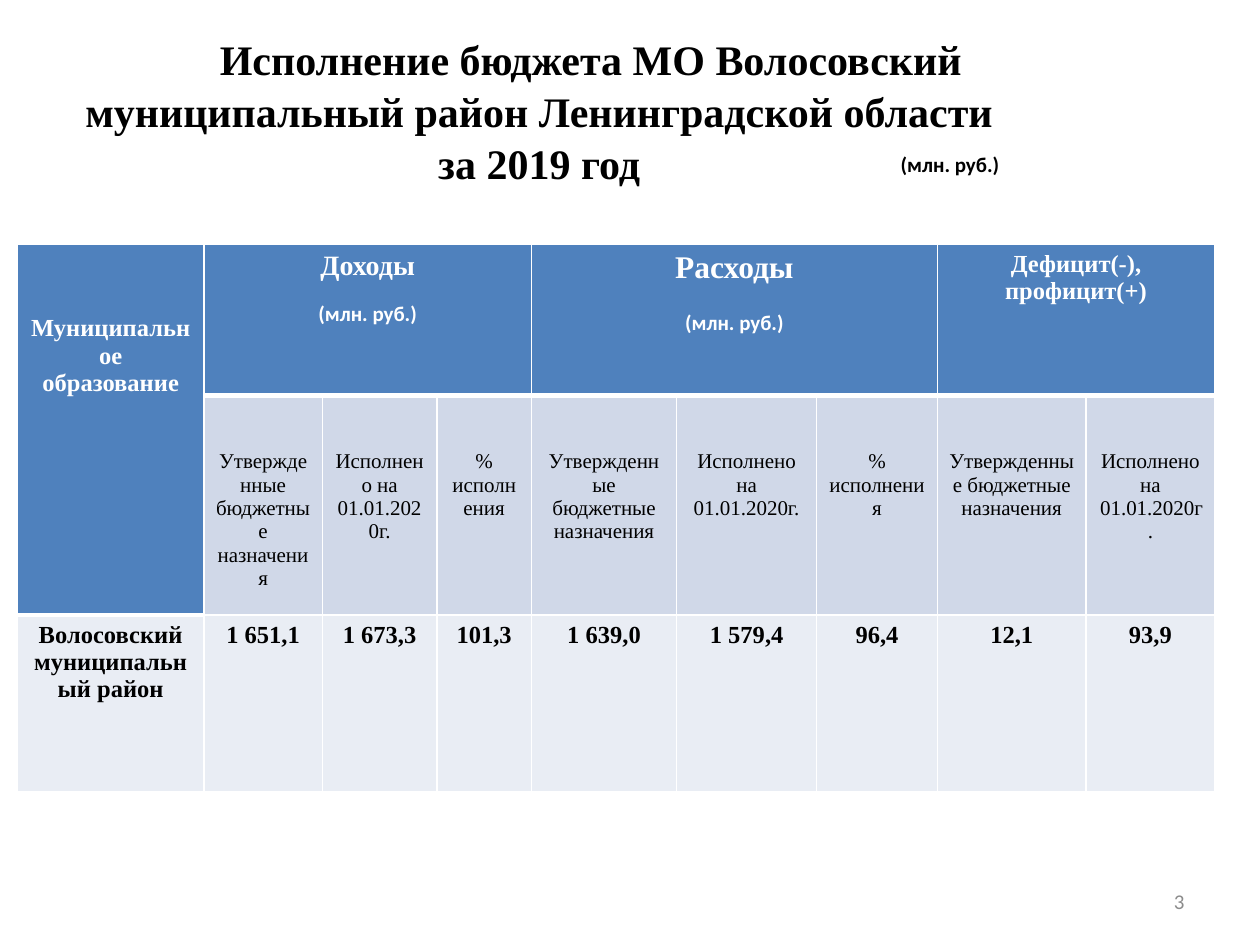
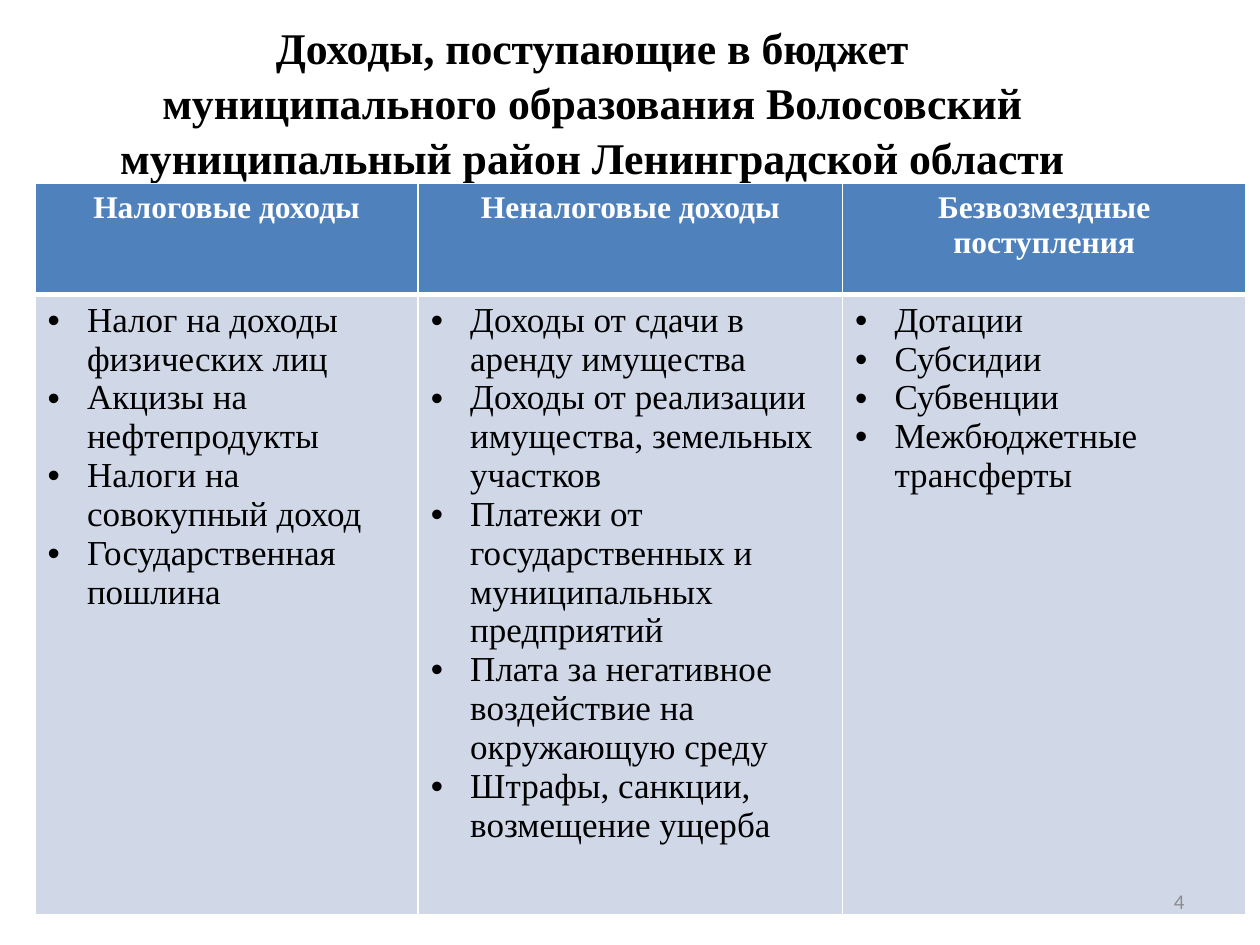
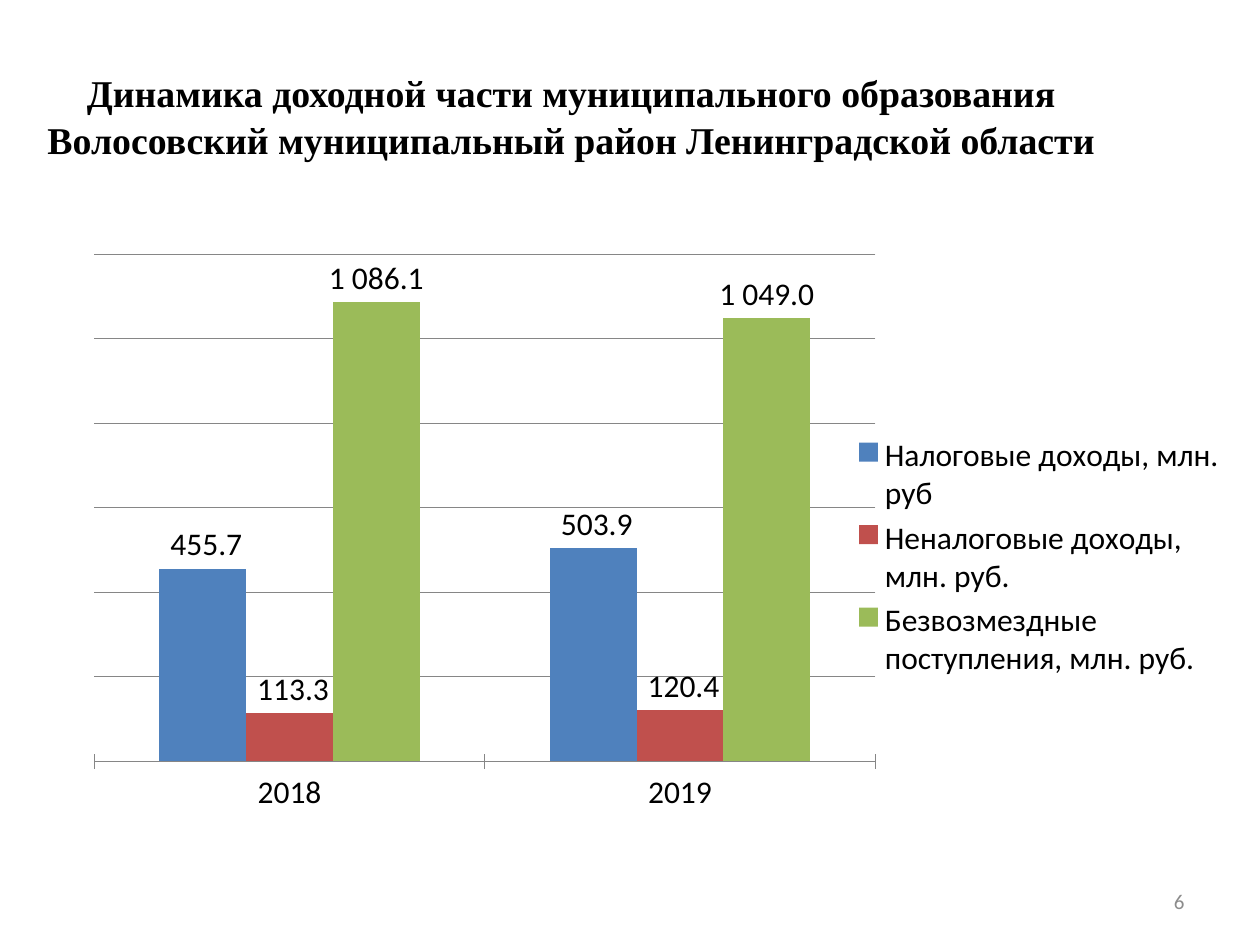
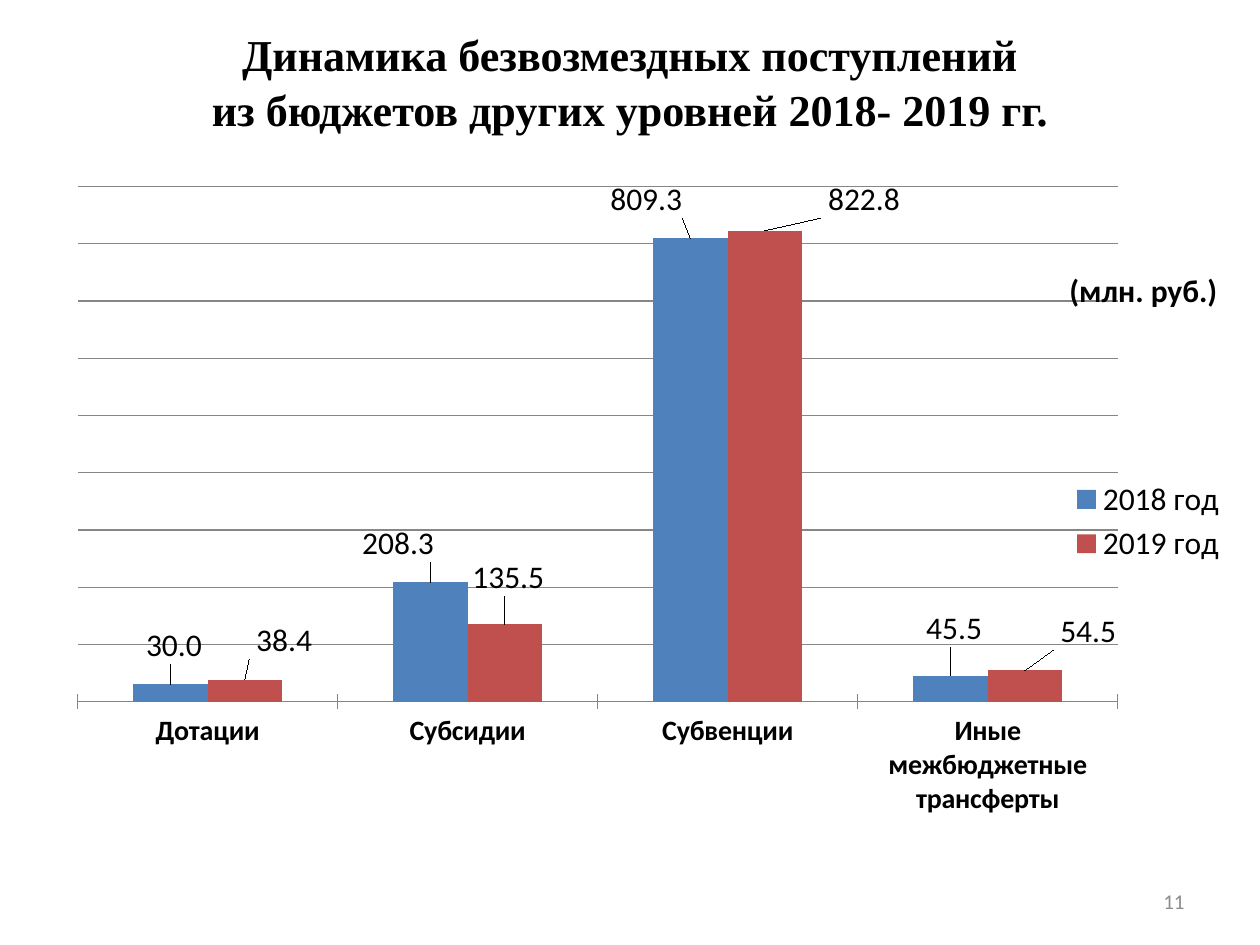
"""Build four slides on the budget of the Volosovsky municipal district."""
import dataclasses

import pptx
import pptx.chart.data
import pptx.dml.color
import pptx.enum.chart
import pptx.enum.text
import pptx.oxml.ns
import pptx.util
from lxml import etree

Pt = pptx.util.Pt
qn = pptx.oxml.ns.qn
ALIGN = pptx.enum.text.PP_ALIGN
MIDDLE = pptx.enum.text.MSO_ANCHOR.MIDDLE


@dataclasses.dataclass(frozen=True)
class Style:
    size: float
    color: str = "000000"
    bold: bool = True
    font: str = "Times New Roman"


class Theme:
    white = "FFFFFF"
    black = "000000"
    header = "4F81BD"
    band = "D0D8E8"
    pale = "E9EDF4"
    grid = "868686"
    series = ("4F81BD", "C0504D", "9BBB59")
    body = "Calibri"
    chart_size = 18
    title_spacing = 1.04
    thin, thick = 1, 3
    number = Style(12, "8C8C8C", False, body)
    unit = Style(12, font=body)
    big_unit = Style(18, font=body)
    head_unit = Style(12, white, font=body)
    subhead = Style(12, bold=False)
    value = Style(14)
    bullet = Style(20, bold=False)
    value_format = "#\\ ##0.0"

    @staticmethod
    def heading(size):
        return Style(size, Theme.white)


UNIT = "(млн. руб.)"
PAGE_NUMBER_BOX = (516.2, 500.4, 167.8, 28.8)

EXECUTION = {
    "page": 3,
    "title": {"lines": ["Исполнение бюджета МО Волосовский муниципальный район Ленинградской области",
                        "за 2019 год"],
              "box": (10.4, 9.4, 595.4, 106.6), "size": 24, "first_indent": 59},
    "unit_box": (507.6, 82.8, 141, 21.6),
    "at": (10, 139.7),
    "columns": (106.5, 67.7, 65.5, 54, 83, 80, 69, 85, 73.5),
    "rows": (86.4, 125.3, 100.8),
    "district": ("Муниципальное образование", 14),
    "groups": [("Доходы", 16, 3, 11.5), ("Расходы", 18, 3, 14), ("Дефицит(-), профицит(+)", 14, 2, None)],
    "subheads": [["Утвержденные", "бюджетные назначения"], ["Исполнено на 01.01.2020г."], ["% исполнения"],
                 ["Утвержденные бюджетные назначения"], ["Исполнено", "на", "01.01.2020г."], ["% исполнения"],
                 ["Утвержденные бюджетные назначения"], ["Исполнено на 01.01.2020г."]],
    "values": [["Волосовский", "муниципальный район"], ["1 651,1"], ["1 673,3"], ["101,3"], ["1 639,0"],
               ["1 579,4"], ["96,4"], ["12,1"], ["93,9"]],
}

SOURCES = {
    "page": 4,
    "title": {"lines": ["Доходы, поступающие в бюджет",
                        "муниципального образования Волосовский муниципальный район Ленинградской области"],
              "box": (14.4, 37.4, 648, 67.7), "size": 25, "lift": 27},
    "at": (20, 105),
    "columns": (219, 242.5, 230.5),
    "rows": (63.4, 354.2),
    "kinds": {
        "Налоговые доходы": ["Налог на доходы физических лиц", "Акцизы на нефтепродукты",
                             "Налоги на совокупный доход", "Государственная пошлина"],
        "Неналоговые доходы": ["Доходы от сдачи в аренду имущества",
                               "Доходы от реализации имущества, земельных участков",
                               "Платежи от государственных и муниципальных предприятий",
                               "Плата за негативное воздействие на окружающую среду",
                               "Штрафы, санкции, возмещение ущерба"],
        "Безвозмездные поступления": ["Дотации", "Субсидии", "Субвенции", "Межбюджетные трансферты"],
    },
}

REVENUE = {
    "page": 6,
    "title": {"lines": ["Динамика доходной части муниципального образования "
                        "Волосовский муниципальный район Ленинградской области"],
              "box": (14.4, 20.9, 624.2, 90), "size": 21.6},
    "box": (14.4, 128.2, 694, 380.2),
    "plot": (0.057, 0.045, 0.643, 0.762),
    "top": 1200, "step": 200,
    "categories": ["2018", "2019"],
    "series": {"Налоговые доходы, млн. руб": (455.7, 503.9),
               "Неналоговые доходы, млн. руб.": (113.3, 120.4),
               "Безвозмездные поступления, млн. руб.": (1086.1, 1049.0)},
}

TRANSFERS = {
    "page": 11,
    "title": {"lines": ["Динамика безвозмездных поступлений", "из бюджетов других уровней 2018- 2019 гг."],
              "box": (36, 9.4, 648, 85), "size": 25.2, "lift": 11.5},
    "box": (25.2, 77, 683.3, 442.1),
    "plot": (0.028, 0.067, 0.87, 0.666),
    "top": 900, "step": 100,
    "categories": ["Дотации", "Субсидии", "Субвенции", "Иные межбюджетные трансферты"],
    "category_font": (16, True),
    "series": {"2018 год": (30, 208.3, 809.3, 45.5), "2019 год": (38.4, 135.5, 822.8, 54.5)},
    "label_shifts": [[(0, -0.02), (-0.03, -0.02), (-0.04, -0.02), (0, -0.03)],
                     [(0.03, -0.02), (0, -0.03), (0.08, -0.01), (0.05, -0.02)]],
    "unit_box": (604, 151.2, 104.4, 28.8),
}


def rgb(color):
    return pptx.dml.color.RGBColor.from_string(color)


def points(lengths):
    return [Pt(length) for length in lengths]


def set_font(font, style):
    font.size, font.bold, font.name = Pt(style.size), style.bold, style.font
    font.color.rgb = rgb(style.color)


def add_run(paragraph, text, style):
    run = paragraph.add_run()
    run.text = text
    set_font(run.font, style)


def add_text(slide, box, text, style, align=ALIGN.LEFT, anchor=None):
    frame = slide.shapes.add_textbox(*points(box)).text_frame
    frame.word_wrap = True
    frame.vertical_anchor = anchor
    paragraph = frame.paragraphs[0]
    paragraph.alignment = align
    for index, line in enumerate([text] if isinstance(text, str) else text):
        if index:
            paragraph.add_line_break()
        add_run(paragraph, line, style)
    return frame


def start_slide(deck, content):
    slide = deck.slides.add_slide(deck.slide_layouts[6])
    title = content["title"]
    frame = add_text(slide, title["box"], title["lines"], Style(title["size"]), ALIGN.CENTER, MIDDLE)
    frame.margin_bottom = Pt(3.6 + title.get("lift", 0))
    heading = frame.paragraphs[0]
    heading.line_spacing = Theme.title_spacing
    if "first_indent" in title:
        heading._p.get_or_add_pPr().set("indent", str(Pt(title["first_indent"])))
    return slide


def add_page_number(slide, content):
    add_text(slide, PAGE_NUMBER_BOX, str(content["page"]), Theme.number, ALIGN.RIGHT, MIDDLE)


def add_grid(slide, content):
    columns, rows = content["columns"], content["rows"]
    size = (sum(columns), sum(rows))
    table = slide.shapes.add_table(len(rows), len(columns), *points(content["at"] + size)).table
    for column, width in zip(table.columns, columns):
        column.width = Pt(width)
    for row, height in zip(table.rows, rows):
        row.height = Pt(height)
    return table


def paint_cell(cell, fill, bottom=Theme.thin, top=None):
    properties = cell._tc.get_or_add_tcPr()
    for side, width in (("L", Theme.thin), ("R", Theme.thin), ("T", top), ("B", bottom)):
        if width:
            line = etree.SubElement(properties, qn(f"a:ln{side}"), w=str(Pt(width)))
            solid = etree.SubElement(line, qn("a:solidFill"))
            etree.SubElement(solid, qn("a:srgbClr"), val=Theme.white)
    cell.fill.solid()
    cell.fill.fore_color.rgb = rgb(fill)


def fill_cell(cell, entries, side=7.2, top=3.6, gap=None, bullets=False):
    cell.margin_left = cell.margin_right = Pt(side)
    cell.margin_top = Pt(top)
    for index, (text, style) in enumerate(entries):
        paragraph = cell.text_frame.add_paragraph() if index else cell.text_frame.paragraphs[0]
        if bullets:
            properties = paragraph._p.get_or_add_pPr()
            properties.set("marL", str(Pt(22.5)))
            properties.set("indent", str(-Pt(22.5)))
            etree.SubElement(properties, qn("a:buFont"), typeface="Arial")
            etree.SubElement(properties, qn("a:buChar"), char="•")
        else:
            paragraph.alignment = ALIGN.CENTER
        if index and gap:
            paragraph.space_before = Pt(gap)
        add_run(paragraph, text, style)


def build_execution(deck):
    slide = start_slide(deck, EXECUTION)
    table = add_grid(slide, EXECUTION)
    side = 6.6
    table.cell(0, 0).merge(table.cell(1, 0))
    for row, fill in enumerate((Theme.header, Theme.band, Theme.pale)):
        for column in range(len(EXECUTION["columns"])):
            is_head = row == 0 or (row == 1 and column == 0)
            paint_cell(table.cell(row, column), Theme.header if is_head else fill,
                       Theme.thick if is_head else Theme.thin, None if row else Theme.thin)

    district, size = EXECUTION["district"]
    fill_cell(table.cell(0, 0), [(district, Theme.heading(size))], side, 40.4)
    column = 1
    for name, size, span, gap in EXECUTION["groups"]:
        table.cell(0, column).merge(table.cell(0, column + span - 1))
        entries = [(name, Theme.heading(size))] + ([(UNIT, Theme.head_unit)] if gap else [])
        fill_cell(table.cell(0, column), entries, side, gap=gap)
        column += span
    for column, lines in enumerate(EXECUTION["subheads"], 1):
        fill_cell(table.cell(1, column), [(line, Theme.subhead) for line in lines], side, 31.2)
    for column, lines in enumerate(EXECUTION["values"]):
        fill_cell(table.cell(2, column), [(line, Theme.value) for line in lines], side)
    add_text(slide, EXECUTION["unit_box"], UNIT, Theme.unit)
    add_page_number(slide, EXECUTION)


def build_sources(deck):
    slide = start_slide(deck, SOURCES)
    table = add_grid(slide, SOURCES)
    for column, (kind, items) in enumerate(SOURCES["kinds"].items()):
        head, listing = table.cell(0, column), table.cell(1, column)
        paint_cell(head, Theme.header, Theme.thick, Theme.thin)
        paint_cell(listing, Theme.band)
        fill_cell(head, [(kind, Theme.heading(18))])
        fill_cell(listing, [(item, Theme.bullet) for item in items], bullets=True)
    add_page_number(slide, SOURCES)


def manual_layout(**settings):
    layout = etree.Element(qn("c:layout"))
    manual = etree.SubElement(layout, qn("c:manualLayout"))
    for name, value in settings.items():
        etree.SubElement(manual, qn(f"c:{name}"), val=str(value))
    return layout


def place_plot(chart, plot):
    area = chart.element.find(".//" + qn("c:plotArea"))
    for automatic in area.findall(qn("c:layout")):
        area.remove(automatic)
    x, y, w, h = plot
    area.insert(0, manual_layout(layoutTarget="inner", xMode="edge", yMode="edge", x=x, y=y, w=w, h=h))


def shift_labels(series, shifts):
    for index, (dx, dy) in enumerate(shifts):
        series.points[index].data_label.position = pptx.enum.chart.XL_LABEL_POSITION.OUTSIDE_END
        label = series.data_labels._element.findall(qn("c:dLbl"))[index]
        number = etree.Element(qn("c:numFmt"), formatCode=Theme.value_format, sourceLinked="0")
        label.insert(1, manual_layout(x=dx, y=dy))
        label.insert(2, number)


def add_columns(slide, content):
    data = pptx.chart.data.CategoryChartData(number_format=Theme.value_format)
    data.categories = content["categories"]
    for name, values in content["series"].items():
        data.add_series(name, values)
    kind = pptx.enum.chart.XL_CHART_TYPE.COLUMN_CLUSTERED
    chart = slide.shapes.add_chart(kind, *points(content["box"]), data).chart
    chart.has_title = False
    set_font(chart.font, Style(Theme.chart_size, bold=False, font=Theme.body))
    chart.has_legend = True
    chart.legend.position = pptx.enum.chart.XL_LEGEND_POSITION.RIGHT
    chart.legend.include_in_layout = False
    place_plot(chart, content["plot"])

    amounts, categories = chart.value_axis, chart.category_axis
    amounts.visible = False
    amounts.minimum_scale, amounts.maximum_scale = 0, content["top"]
    amounts.major_unit = content["step"]
    amounts.has_major_gridlines = True
    categories.major_tick_mark = pptx.enum.chart.XL_TICK_MARK.CROSS
    for line in (amounts.major_gridlines.format.line, categories.format.line):
        line.color.rgb = rgb(Theme.grid)
        line.width = Pt(0.75)
    if "category_font" in content:
        size, bold = content["category_font"]
        set_font(categories.tick_labels.font, Style(size, bold=bold, font=Theme.body))

    plot = chart.plots[0]
    plot.gap_width, plot.overlap = 150, 0
    plot.vary_by_categories = False
    for index, (series, color) in enumerate(zip(plot.series, Theme.series)):
        series.format.fill.solid()
        series.format.fill.fore_color.rgb = rgb(color)
        labels = series.data_labels
        labels.show_value = True
        labels.number_format, labels.number_format_is_linked = Theme.value_format, False
        labels.position = pptx.enum.chart.XL_LABEL_POSITION.OUTSIDE_END
        if "label_shifts" in content:
            shift_labels(series, content["label_shifts"][index])


def build_chart_slide(deck, content):
    slide = start_slide(deck, content)
    add_columns(slide, content)
    if "unit_box" in content:
        add_text(slide, content["unit_box"], UNIT, Theme.big_unit)
    add_page_number(slide, content)


def main():
    deck = pptx.Presentation()
    deck.slide_width, deck.slide_height = Pt(720), Pt(540)
    build_execution(deck)
    build_sources(deck)
    for content in (REVENUE, TRANSFERS):
        build_chart_slide(deck, content)
    deck.save("out.pptx")


if __name__ == "__main__":
    main()
